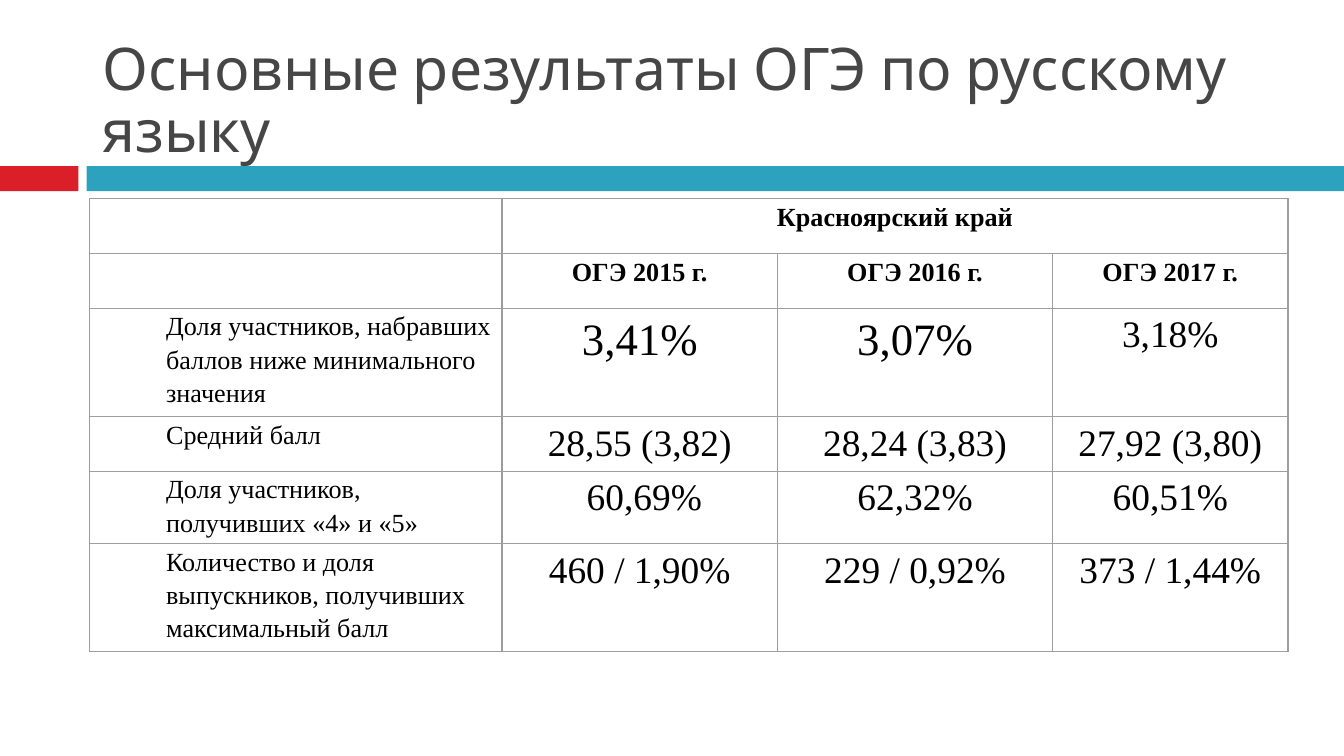
from pptx import Presentation
from pptx.util import Pt
from pptx.dml.color import RGBColor
from pptx.enum.shapes import MSO_SHAPE
from pptx.enum.text import MSO_ANCHOR, PP_ALIGN
from pptx.oxml.ns import qn
from lxml.etree import SubElement

TITLE = "Основные результаты ОГЭ по русскому языку"
REGION = "Красноярский край"
YEARS = ["ОГЭ 2015 г.", "ОГЭ 2016 г.", "ОГЭ 2017 г."]
ROWS = [
    ("Доля участников, набравших баллов ниже минимального значения",
     ["3,41%", "3,07%", "3,18%"], [24, 24, 20]),
    ("Средний балл",
     ["28,55 (3,82)", "28,24 (3,83)", "27,92 (3,80)"], [20] * 3),
    ("Доля участников, получивших «4» и «5»",
     [" 60,69%", "62,32%", "60,51%"], [20] * 3),
    ("Количество и доля выпускников, получивших максимальный балл",
     ["460 / 1,90%", "229 / 0,92%", "373 / 1,44%"], [20] * 3),
]
COLORS = {"red": "DA1F28", "teal": "2DA2BF", "title": "464646",
          "text": "000000", "line": "9E9E9E"}
WIDTHS = [221, 147.5, 147.5, 126]
LEFT, WIDE, HIGH = 48, 720, 405
ROW = 29.4


def write(frame, text, size=14, font="Times New Roman", color="text",
          bold=False, align=PP_ALIGN.CENTER, space=1.15, indent=0):
    para = frame.paragraphs[0]
    para.alignment = align
    para.line_spacing = space
    if indent:
        props = para._p.get_or_add_pPr()
        props.set("marL", str(Pt(indent)))
        props.set("indent", "0")
    run = para.add_run()
    run.text = text
    run.font.size = Pt(size)
    run.font.name = font
    run.font.bold = bold
    run.font.color.rgb = RGBColor.from_string(COLORS[color])


def border(cell):
    props = cell._tc.get_or_add_tcPr()
    for index, side in enumerate(("lnL", "lnR", "lnT", "lnB")):
        line = SubElement(props, qn("a:" + side), w=str(Pt(0.75)))
        fill = SubElement(line, qn("a:solidFill"))
        SubElement(fill, qn("a:srgbClr"), val=COLORS["line"])
        props.remove(line)
        props.insert(index, line)


deck = Presentation()
deck.slide_width, deck.slide_height = Pt(WIDE), Pt(HIGH)
slide = deck.slides.add_slide(deck.slide_layouts[6])

for left, width, color in [(0, 42, "red"), (46.5, WIDE - 46.5, "teal")]:
    bar = slide.shapes.add_shape(MSO_SHAPE.RECTANGLE, Pt(left), Pt(89),
                                 Pt(width), Pt(13.5))
    bar.shadow.inherit = False
    bar.fill.solid()
    bar.fill.fore_color.rgb = RGBColor.from_string(COLORS[color])
    bar.line.fill.background()

frame = slide.shapes.add_textbox(Pt(LEFT), Pt(9.4), Pt(sum(WIDTHS)),
                                 Pt(79.2)).text_frame
frame.word_wrap = True
frame.vertical_anchor = MSO_ANCHOR.BOTTOM
frame.margin_top = frame.margin_bottom = 0
write(frame, TITLE, size=31.5, font="Cabin", color="title",
      align=PP_ALIGN.LEFT, space=0.88)

count = len(ROWS) + 2
table = slide.shapes.add_table(count, len(WIDTHS), Pt(LEFT), Pt(106.4),
                               Pt(sum(WIDTHS)), Pt(ROW * count)).table
table.first_row = table.horz_banding = False
for col, width in zip(table.columns, WIDTHS):
    col.width = Pt(width)
for row in table.rows:
    row.height = Pt(ROW)
for cell in table.iter_cells():
    cell.margin_left = cell.margin_right = Pt(5)
    cell.margin_top = cell.margin_bottom = 0
    cell.fill.background()
    border(cell)

table.cell(0, 1).merge(table.cell(0, 3))
write(table.cell(0, 1).text_frame, REGION, bold=True)
for col, year in enumerate(YEARS, 1):
    write(table.cell(1, col).text_frame, year, bold=True)
for row, (label, values, sizes) in enumerate(ROWS, 2):
    write(table.cell(row, 0).text_frame, label, align=PP_ALIGN.LEFT, indent=36)
    for col, (value, size) in enumerate(zip(values, sizes), 1):
        write(table.cell(row, col).text_frame, value, size=size)

deck.save("out.pptx")
